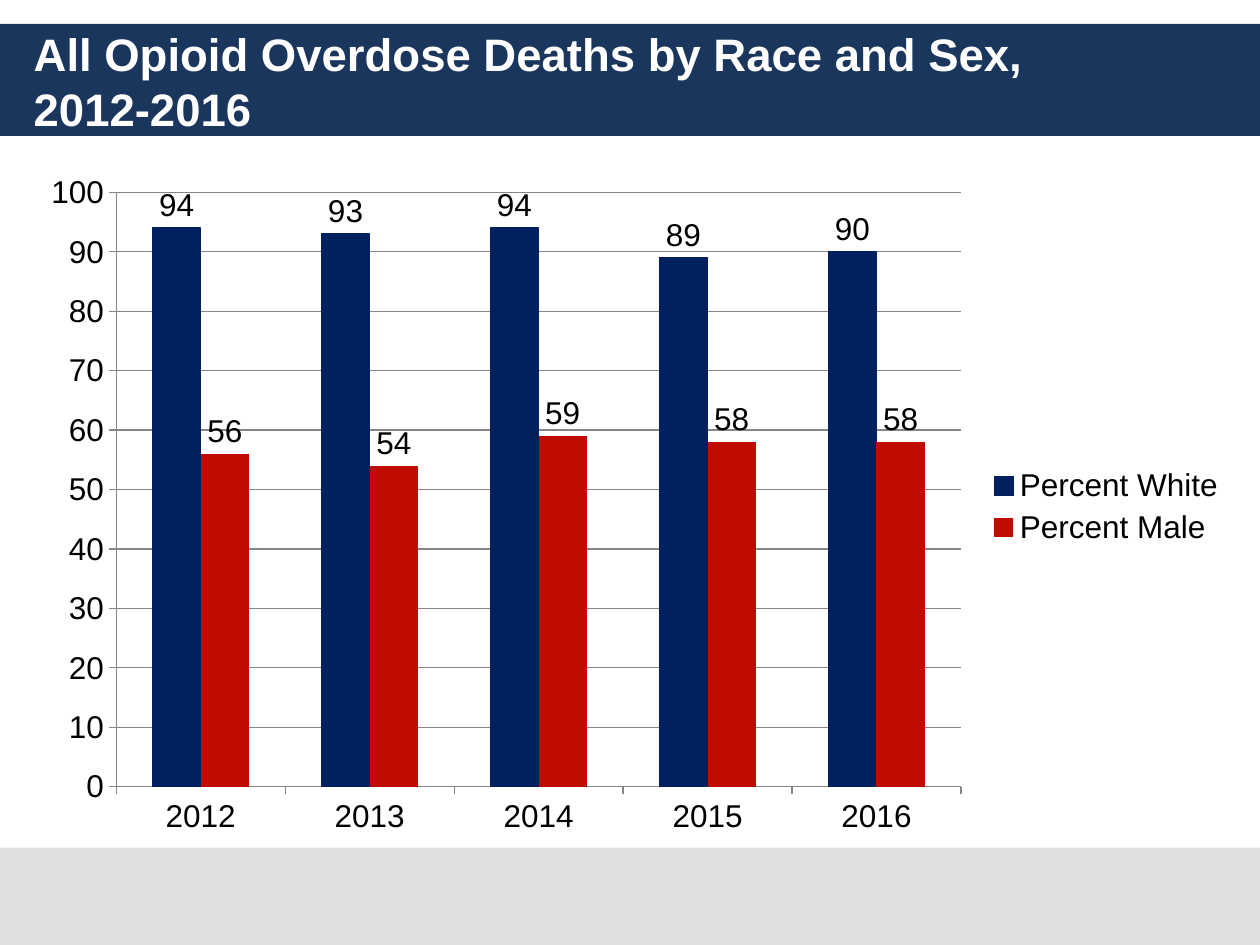
"""Build a slide with a clustered column chart of opioid overdose deaths by race and sex."""
from lxml import etree
from pptx import Presentation
from pptx.chart.data import CategoryChartData
from pptx.dml.color import RGBColor
from pptx.enum.chart import XL_CHART_TYPE, XL_LABEL_POSITION, XL_LEGEND_POSITION, XL_TICK_MARK
from pptx.enum.shapes import MSO_SHAPE
from pptx.enum.text import MSO_ANCHOR, PP_ALIGN
from pptx.oxml.ns import qn
from pptx.util import Cm, Pt

COLUMNS = XL_CHART_TYPE.COLUMN_CLUSTERED
OUTSIDE_END = XL_LABEL_POSITION.OUTSIDE_END
LEGEND_RIGHT = XL_LEGEND_POSITION.RIGHT
TICK_OUTSIDE = XL_TICK_MARK.OUTSIDE
RECTANGLE = MSO_SHAPE.RECTANGLE
MIDDLE = MSO_ANCHOR.MIDDLE
LEFT = PP_ALIGN.LEFT

COLORS = {
    "navy": "1B365D",
    "footer": "E0E0E0",
    "title": "FFFFFF",
    "text": "000000",
    "axis": "868686",
    "white": "002060",
    "male": "BF0B00",
}
TITLE = "All Opioid Overdose Deaths by Race and Sex,\v2012-2016"
YEARS = ["2012", "2013", "2014", "2015", "2016"]
SERIES = [
    ("Percent White", [94, 93, 94, 89, 90], "white"),
    ("Percent Male", [56, 54, 59, 58, 58], "male"),
]
BANDS = [
    (0, 0.48, 25.4, 2.26, "navy"),
    (0, 17.09, 25.4, 1.96, "footer"),
]
TITLE_BOX = (0.43, 0.48, 24.56, 2.29)
CHART_BOX = (0.64, 3.33, 24.33, 13.77)
PLOT_LAYOUT = {
    "layoutTarget": "inner", "xMode": "edge", "yMode": "edge",
    "x": 0.07, "y": 0.04, "w": 0.7, "h": 0.87,
}
TITLE_FONT = {"name": "Arial", "size": Pt(26), "bold": True}
CHART_FONT = {"name": "Arial", "size": Pt(18), "bold": False}


def color(name):
    return RGBColor.from_string(COLORS[name])


def lengths(box):
    return [Cm(value) for value in box]


def set_font(font, formats, color_name):
    for attribute, value in formats.items():
        setattr(font, attribute, value)
    font.color.rgb = color(color_name)


def add_band(slide, *box, fill):
    shape = slide.shapes.add_shape(RECTANGLE, *lengths(box))
    shape.shadow.inherit = False
    shape.fill.solid()
    shape.fill.fore_color.rgb = color(fill)
    shape.line.fill.background()


def add_title(slide):
    frame = slide.shapes.add_textbox(*lengths(TITLE_BOX)).text_frame
    frame.word_wrap = True
    frame.vertical_anchor = MIDDLE
    paragraph = frame.paragraphs[0]
    paragraph.text = TITLE
    paragraph.alignment = LEFT
    for run in paragraph.runs:
        set_font(run.font, TITLE_FONT, "title")


def place_plot(chart):
    plot_area = chart._chartSpace.chart.plotArea
    for layout in plot_area.findall(qn("c:layout")):
        plot_area.remove(layout)
    layout = etree.Element(qn("c:layout"))
    manual = etree.SubElement(layout, qn("c:manualLayout"))
    for name, value in PLOT_LAYOUT.items():
        etree.SubElement(manual, qn(f"c:{name}")).set("val", str(value))
    plot_area.insert(0, layout)


def add_chart(slide):
    data = CategoryChartData()
    data.categories = YEARS
    for name, values, _ in SERIES:
        data.add_series(name, values)
    chart = slide.shapes.add_chart(COLUMNS, *lengths(CHART_BOX), data).chart
    set_font(chart.font, CHART_FONT, "text")
    chart.has_title = False
    chart.has_legend = True
    chart.legend.position = LEGEND_RIGHT
    chart.legend.include_in_layout = False

    value_axis = chart.value_axis
    value_axis.minimum_scale, value_axis.maximum_scale, value_axis.major_unit = 0, 100, 10
    value_axis.has_major_gridlines = True
    for axis in (chart.category_axis, value_axis):
        axis.major_tick_mark = TICK_OUTSIDE
    for item in (chart.category_axis, value_axis, value_axis.major_gridlines):
        item.format.line.color.rgb = color("axis")
        item.format.line.width = Pt(0.75)

    plot = chart.plots[0]
    plot.gap_width = 150
    plot.overlap = 0
    plot.vary_by_categories = False
    for series, (_, _, color_name) in zip(plot.series, SERIES):
        series.format.fill.solid()
        series.format.fill.fore_color.rgb = color(color_name)
        series.data_labels.show_value = True
        series.data_labels.position = OUTSIDE_END
    white_line = plot.series[0].format.line
    white_line.color.rgb = color("white")
    white_line.width = Pt(0.75)
    place_plot(chart)


def main():
    presentation = Presentation()
    presentation.slide_width, presentation.slide_height = Cm(25.4), Cm(19.05)
    slide = presentation.slides.add_slide(presentation.slide_layouts[6])
    for *box, fill in BANDS:
        add_band(slide, *box, fill=fill)
    add_title(slide)
    add_chart(slide)
    presentation.save("out.pptx")


if __name__ == "__main__":
    main()
